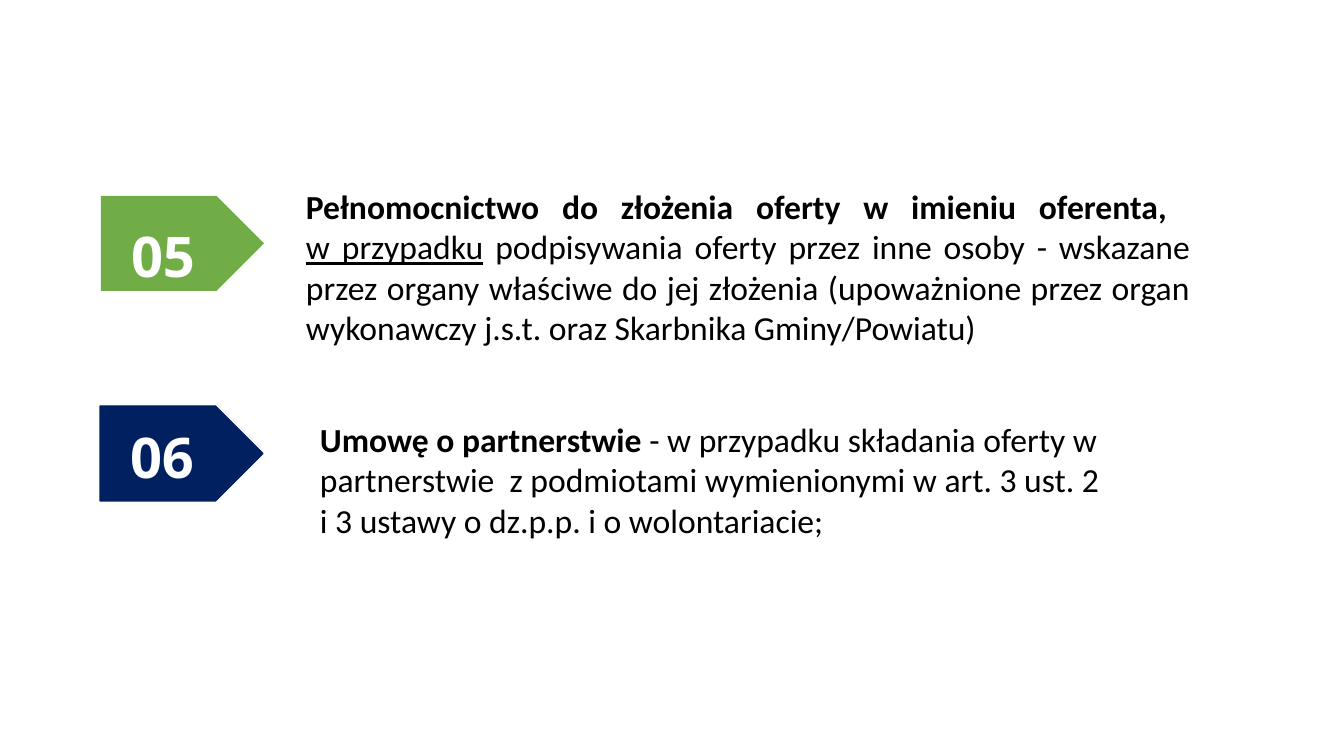
from pptx import Presentation
from pptx import util as u
from pptx.dml.color import RGBColor
from pptx.enum import shapes, text


def px(n):
    """Turn pixels into EMU."""
    return u.Emu(round(n * 914400 / 100.8))


def color(code):
    """Turn a hex string into a colour."""
    return RGBColor.from_string(code)


def write(slide, box, runs, size=24, font="Calibri", ink="000000", align="LEFT"):
    """Add a text box of (words, bold, underline) runs."""
    frame = slide.shapes.add_textbox(*map(px, box)).text_frame
    frame.word_wrap = True
    frame.auto_size = text.MSO_AUTO_SIZE.SHAPE_TO_FIT_TEXT
    para = frame.paragraphs[0]
    para.alignment = getattr(text.PP_ALIGN, align)
    for words, bold, under in runs:
        for i, part in enumerate(words.split("\n")):
            if i:
                para.add_line_break()
            if not part:
                continue
            run = para.add_run()
            run.text = part
            run.font.size = u.Pt(size)
            run.font.name = font
            run.font.bold = bold
            run.font.underline = under
            run.font.color.rgb = color(ink)


def badge(slide, left, top, drop, label, fill, line=None):
    """Add a numbered arrow tag."""
    tag = slide.shapes.add_shape(
        shapes.MSO_SHAPE.PENTAGON, px(left), px(top), px(163), px(95))
    tag.shadow.inherit = False
    tag.fill.solid()
    tag.fill.fore_color.rgb = color(fill)
    if line:
        tag.line.color.rgb = color(line)
        tag.line.width = u.Pt(1)
    else:
        tag.line.fill.background()
    write(slide, (left + 6, top + drop, 112, 78), [(label, True, False)],
          size=40, font="Open Sans", ink="FFFFFF", align="CENTER")


def main():
    """Build the slide and save it."""
    deck = Presentation()
    deck.slide_width, deck.slide_height = px(1344), px(756)
    slide = deck.slides.add_slide(deck.slide_layouts[6])
    badge(slide, 101, 196, 21, "05", "70AD47")
    write(slide, (296, 181, 904, 173), [
        ("Pełnomocnictwo do złożenia oferty w imieniu oferenta, \n", True, False),
        ("w przypadku", False, True),
        (" podpisywania oferty przez inne osoby - wskazane przez organy właściwe "
         "do jej złożenia (upoważnione przez organ wykonawczy j.s.t. oraz "
         "Skarbnika Gminy/Powiatu)", False, False),
    ], align="JUSTIFY")
    badge(slide, 100, 406, 12, "06", "002060", line="002060")
    write(slide, (310, 414, 824, 132), [
        ("Umowę o partnerstwie ", True, False),
        ("- w przypadku składania oferty w partnerstwie  z podmiotami "
         "wymienionymi w art. 3 ust. 2 \ni 3 ustawy o dz.p.p. i o wolontariacie;",
         False, False),
    ])
    deck.save("out.pptx")


if __name__ == "__main__":
    main()
